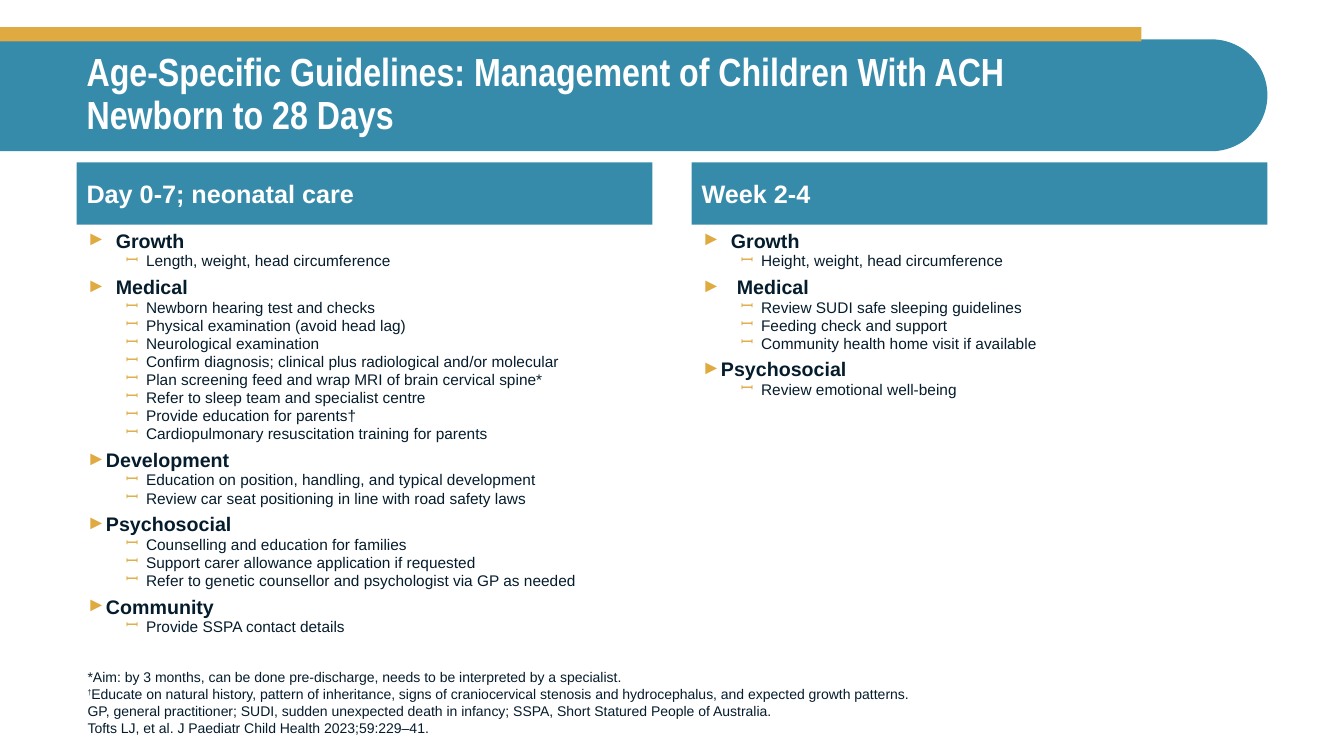
from lxml import etree
from pptx import Presentation
from pptx.dml.color import RGBColor
from pptx.enum.shapes import MSO_SHAPE
from pptx.enum.text import MSO_ANCHOR, MSO_AUTO_SIZE, PP_ALIGN
from pptx.oxml.ns import qn
from pptx.util import Inches, Pt

RECTANGLE, ROUND_END = MSO_SHAPE.RECTANGLE, MSO_SHAPE.ROUND_2_SAME_RECTANGLE
TOP, MIDDLE, BOTTOM = MSO_ANCHOR.TOP, MSO_ANCHOR.MIDDLE, MSO_ANCHOR.BOTTOM
TEAL = RGBColor(0x36, 0x8B, 0xAB)
GOLD = RGBColor(0xDF, 0xAA, 0x40)
NAVY = RGBColor(0x05, 0x1C, 0x2C)
WHITE = RGBColor(0xFF, 0xFF, 0xFF)

LEFT, COLUMN_WIDTH, COLUMN_STEP = 0.76, 5.71, 6.1
BAND_TOP, BAND_WIDTH, BAND_HEIGHT = 0.39, 12.57, 1.11

TITLE_FONT = {"name": "Arial Narrow", "size": Pt(28), "bold": True}
HEADER_FONT = {"name": "Arial", "size": Pt(18), "bold": True}
TOPIC_FONT = {"name": "Arial", "size": Pt(14), "bold": True}
ITEM_FONT = {"name": "Arial", "size": Pt(11), "bold": False}
NOTE_FONT = {"name": "Arial", "size": Pt(10), "bold": False}

# Each topic: heading, hanging indent, items
COLUMNS = [
    ("Day 0-7; neonatal care", [
        ("Growth", 0.29, ["Length, weight, head circumference"]),
        ("Medical", 0.29, [
            "Newborn hearing test and checks",
            "Physical examination (avoid head lag)",
            "Neurological examination",
            "Confirm diagnosis; clinical plus radiological and/or molecular",
            "Plan screening feed and wrap MRI of brain cervical spine*",
            "Refer to sleep team and specialist centre",
            "Provide education for parents†",
            "Cardiopulmonary resuscitation training for parents",
        ]),
        ("Development", 0.19, [
            "Education on position, handling, and typical development",
            "Review car seat positioning in line with road safety laws",
        ]),
        ("Psychosocial", 0.19, [
            "Counselling and education for families",
            "Support carer allowance application if requested",
            "Refer to genetic counsellor and psychologist via GP as needed",
        ]),
        ("Community", 0.19, ["Provide SSPA contact details"]),
    ]),
    ("Week 2-4", [
        ("Growth", 0.29, ["Height, weight, head circumference"]),
        ("Medical", 0.35, [
            "Review SUDI safe sleeping guidelines",
            "Feeding check and support",
            "Community health home visit if available",
        ]),
        ("Psychosocial", 0.19, ["Review emotional well-being"]),
    ]),
]

NOTES = [
    ("", "*Aim: by 3 months, can be done pre-discharge, needs to be interpreted by a specialist."),
    ("†", "Educate on natural history, pattern of inheritance, signs of craniocervical stenosis "
          "and hydrocephalus, and expected growth patterns."),
    ("", "GP, general practitioner; SUDI, sudden unexpected death in infancy; "
         "SSPA, Short Statured People of Australia."),
    ("", "Tofts LJ, et al. J Paediatr Child Health 2023;59:229–41."),
]


def style_font(font, values, color):
    for name, value in values.items():
        setattr(font, name, value)
    font.color.rgb = color


def add_bullet(para, symbol, margin, hanging):
    properties = para._p.get_or_add_pPr()
    properties.set("marL", str(Inches(margin)))
    properties.set("indent", str(-Inches(hanging)))
    bullet_color = etree.SubElement(properties, qn("a:buClr"))
    etree.SubElement(bullet_color, qn("a:srgbClr"), val=str(GOLD))
    etree.SubElement(properties, qn("a:buFont"), typeface="Arial")
    etree.SubElement(properties, qn("a:buChar"), char=symbol)


deck = Presentation()
deck.slide_width, deck.slide_height = Inches(13.33), Inches(7.5)
page = deck.slides.add_slide(deck.slide_layouts[5])
shapes = page.shapes

# Title band: a tall shape turned so that its round end points right
band = shapes.add_shape(
    ROUND_END, Inches((BAND_WIDTH - BAND_HEIGHT) / 2),
    Inches(BAND_TOP + (BAND_HEIGHT - BAND_WIDTH) / 2),
    Inches(BAND_HEIGHT), Inches(BAND_WIDTH))
band.rotation = 90
band.adjustments[0], band.adjustments[1] = 0.5, 0
stripe = shapes.add_shape(RECTANGLE, 0, Inches(0.27), Inches(11.32), Inches(0.14))
for shape, color in ((band, TEAL), (stripe, GOLD)):
    shape.shadow.inherit = False
    shape.fill.solid()
    shape.fill.fore_color.rgb = color
    shape.line.fill.background()

title = shapes.title
title.left, title.top = Inches(LEFT), Inches(BAND_TOP)
title.width, title.height = Inches(BAND_WIDTH - LEFT), Inches(BAND_HEIGHT)
title.text_frame.text = "Age-Specific Guidelines: Management of Children With ACH\vNewborn to 28 Days"
title.text_frame.auto_size = MSO_AUTO_SIZE.NONE
title.text_frame.vertical_anchor = MIDDLE
heading = title.text_frame.paragraphs[0]
heading.alignment, heading.line_spacing = PP_ALIGN.LEFT, 0.9
for span in heading.runs:
    style_font(span.font, TITLE_FONT, WHITE)
shapes._spTree.append(title._element)

for index, (header_text, topics) in enumerate(COLUMNS):
    left = Inches(LEFT + index * COLUMN_STEP)
    header = shapes.add_shape(RECTANGLE, left, Inches(1.61), Inches(COLUMN_WIDTH), Inches(0.62))
    header.shadow.inherit = False
    header.fill.solid()
    header.fill.fore_color.rgb = TEAL
    header.line.fill.background()
    header.text_frame.vertical_anchor = MIDDLE
    para = header.text_frame.paragraphs[0]
    para.alignment = PP_ALIGN.LEFT
    span = para.add_run()
    span.text = header_text
    style_font(span.font, HEADER_FONT, WHITE)

    frame = shapes.add_textbox(left, Inches(2.3), Inches(COLUMN_WIDTH), Inches(4.31)).text_frame
    frame.word_wrap, frame.vertical_anchor = True, TOP
    lines = []
    for topic, hanging, items in topics:
        lines.append((topic, 0, "►", hanging, hanging, 10, TOPIC_FONT))
        lines += [(item, 1, "ꟷ", 0.59, 0.2, 5, ITEM_FONT) for item in items]
    for number, (text, level, symbol, margin, hanging, space, font) in enumerate(lines):
        para = frame.add_paragraph() if number else frame.paragraphs[0]
        add_bullet(para, symbol, margin, hanging)
        para.level, para.line_spacing = level, 0.6
        para.space_before = Pt(space if number else 0)
        span = para.add_run()
        span.text = text
        style_font(span.font, font, NAVY)

frame = shapes.add_textbox(Inches(0.77), Inches(6.71), Inches(9.88), Inches(0.64)).text_frame
frame.word_wrap, frame.vertical_anchor = True, BOTTOM
for number, (mark, text) in enumerate(NOTES):
    para = frame.add_paragraph() if number else frame.paragraphs[0]
    if mark:
        span = para.add_run()
        span.text = mark
        style_font(span.font, NOTE_FONT | {"name": "Arial Narrow"}, NAVY)
        span.font._element.set("baseline", "30000")
    span = para.add_run()
    span.text = text
    style_font(span.font, NOTE_FONT, NAVY)

deck.save("out.pptx")
